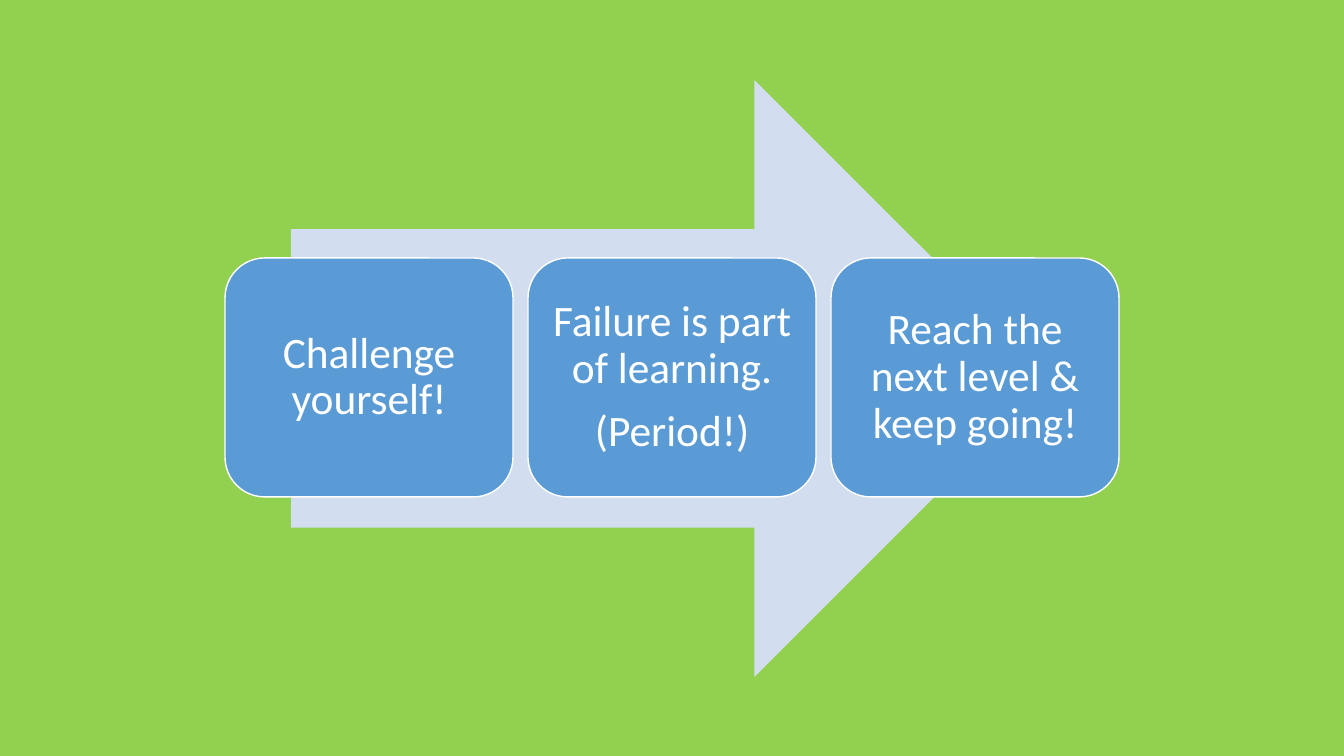
from pptx import Presentation
from pptx.dml.color import RGBColor
from pptx.enum.shapes import MSO_SHAPE as SHAPE
from pptx.enum.text import MSO_ANCHOR as ANCHOR, PP_ALIGN as ALIGN
from pptx.util import Emu, Pt

GREEN = RGBColor(0x92, 0xD0, 0x50)
PALE_BLUE = RGBColor(0xD2, 0xDE, 0xEF)
BLUE = RGBColor(0x5B, 0x9B, 0xD5)
WHITE = RGBColor(0xFF, 0xFF, 0xFF)

STEPS = [
    ["Challenge yourself!"],
    ["Failure is part of learning.", "(Period!)"],
    ["Reach the next level & keep going!"],
]
STEP_LEFT, STEP_TOP, STEP_W, STEP_H, STEP_GAP = 225, 258, 288, 239, 15


def px(n):
    return Emu(round(n * 914400 / 100.8))


def set_all(obj, values):
    for name, value in values.items():
        setattr(obj, name, value)


def add_block(s, kind, box, fill):
    sp = s.shapes.add_shape(kind, *map(px, box))
    sp.shadow.inherit = False
    sp.fill.solid()
    sp.fill.fore_color.rgb = fill
    sp.line.fill.background()
    return sp


def add_step(s, left, lines):
    sp = add_block(s, SHAPE.ROUNDED_RECTANGLE, (left, STEP_TOP, STEP_W, STEP_H), BLUE)
    sp.line.color.rgb = WHITE
    sp.line.width = Pt(1)
    tf = sp.text_frame
    sides = ("left", "top", "right", "bottom")
    set_all(tf, {f"margin_{side}": px(13) for side in sides})
    set_all(tf, {"word_wrap": True, "vertical_anchor": ANCHOR.MIDDLE})
    tf.text = "\n".join(lines)
    for p in tf.paragraphs:
        set_all(p, {"alignment": ALIGN.CENTER, "line_spacing": 0.9, "space_after": Pt(11)})
        r = p.runs[0]
        set_all(r.font, {"name": "Calibri", "size": Pt(31)})
        r.font.color.rgb = WHITE


def main():
    """Build the slide of three steps on a right arrow."""
    prs = Presentation()
    set_all(prs, {"slide_width": px(1344), "slide_height": px(756)})
    s = prs.slides.add_slide(prs.slide_layouts[6])
    s.background.fill.solid()
    s.background.fill.fore_color.rgb = GREEN
    add_block(s, SHAPE.RIGHT_ARROW, (291, 80, 762, 597), PALE_BLUE)
    for i, lines in enumerate(STEPS):
        add_step(s, STEP_LEFT + i * (STEP_W + STEP_GAP), lines)
    prs.save("out.pptx")


if __name__ == "__main__":
    main()
